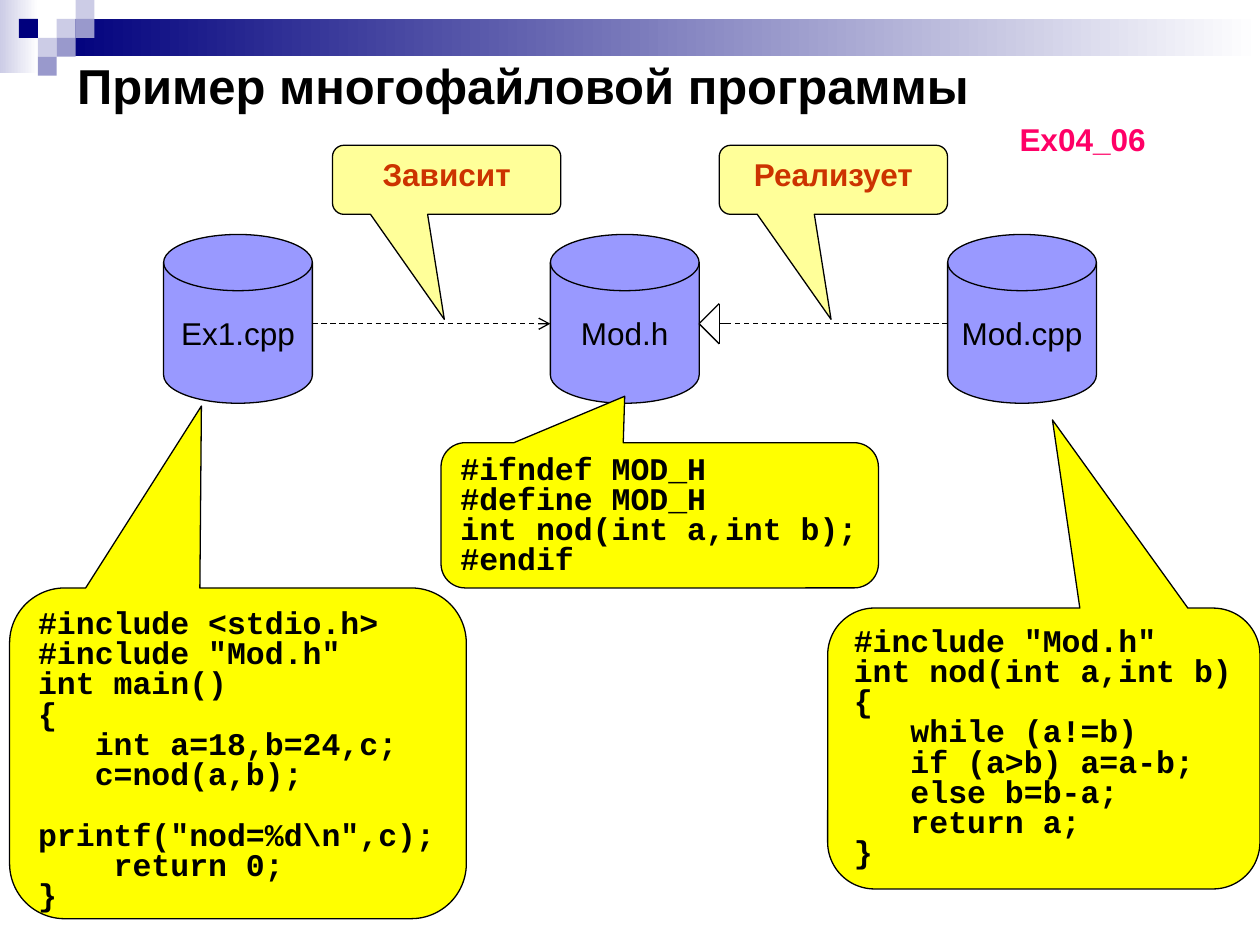
from lxml import etree
from pptx import Presentation
from pptx.dml.color import RGBColor
from pptx.enum import dml, shapes, text
from pptx.oxml import ns
from pptx.util import Pt

HUES = {"navy": "00007D", "mid": "9999CC", "pale": "CCCCE6", "white": "FFFFFF",
        "black": "000000", "disk": "9999FF", "cream": "FFFF99", "yellow": "FFFF00",
        "rust": "CC3300", "pink": "FF0066"}
KIND = shapes.MSO_SHAPE

MAIN = """#include <stdio.h>
#include "Mod.h"
int main()
{
   int a=18,b=24,c;
   c=nod(a,b);
   printf("nod=%d\\n",c);
    return 0;
}"""
HEAD = """#ifndef MOD_H
#define MOD_H
int nod(int a,int b);
#endif"""
BODY = """#include "Mod.h"
int nod(int a,int b)
{
   while (a!=b)
   if (a>b) a=a-b;
   else b=b-a;
   return a;
}"""


def hue(name):
    return RGBColor.from_string(HUES[name])


class Pen:
    """Draws styled elements on the current slide."""

    def __init__(self, slide):
        self.slide = slide
        self.font = "Arial"
        self.code = "Courier New"
        self.size = 18
        self.width = 0.75

    def letter(self, shape, words, color="black", size=None, font=None, bold=True,
               align=text.PP_ALIGN.LEFT, anchor=text.MSO_ANCHOR.TOP, wrap=True, lead=None):
        frame = shape.text_frame
        frame.text = words
        frame.word_wrap = wrap
        frame.vertical_anchor = anchor
        for para in frame.paragraphs:
            para.alignment = align
            para.line_spacing = lead
            for run in para.runs:
                run.font.name = font or self.font
                run.font.size = Pt(size or self.size)
                run.font.bold = bold
                run.font.color.rgb = hue(color)

    def shape(self, kind, box, fill, line=True):
        item = self.slide.shapes.add_shape(kind, *map(Pt, box))
        item.shadow.inherit = False
        item.fill.solid()
        item.fill.fore_color.rgb = hue(fill)
        if line:
            item.line.color.rgb = hue("black")
            item.line.width = Pt(self.width)
        else:
            item.line.fill.background()
        return item

    def fade(self, box, start):
        item = self.shape(KIND.RECTANGLE, box, start, line=False)
        item.fill.gradient()
        item.fill.gradient_angle = 0
        for stop, name in zip(item.fill.gradient_stops, (start, "white")):
            stop.color.rgb = hue(name)

    def label(self, box, words, **style):
        self.letter(self.slide.shapes.add_textbox(*map(Pt, box)), words, **style)

    def disk(self, box, words):
        item = self.shape(KIND.FLOWCHART_MAGNETIC_DISK, box, "disk")
        self.letter(item, words, bold=False, wrap=False,
                    align=text.PP_ALIGN.CENTER, anchor=text.MSO_ANCHOR.MIDDLE)

    def call(self, box, tip, words, fill, **style):
        item = self.shape(KIND.ROUNDED_RECTANGULAR_CALLOUT, box, fill)
        item.adjustments[0], item.adjustments[1] = tip
        self.letter(item, words, **style)

    def line(self, start, end, dash=False, arrow=False):
        item = self.slide.shapes.add_connector(
            shapes.MSO_CONNECTOR.STRAIGHT, *map(Pt, start + end))
        item.line.color.rgb = hue("black")
        item.line.width = Pt(self.width)
        if dash:
            item.line.dash_style = dml.MSO_LINE.DASH
        props = item._element.spPr
        if arrow:
            etree.SubElement(props.find(ns.qn("a:ln")), ns.qn("a:tailEnd"), type="arrow")
        etree.SubElement(props, ns.qn("a:effectLst"))


def main():
    deck = Presentation()
    deck.slide_width, deck.slide_height = Pt(720), Pt(540)
    pen = Pen(deck.slides.add_slide(deck.slide_layouts[6]))

    pen.fade((0, 0, 22, 41.6), "pale")
    pen.fade((32.4, 10.8, 687.6, 21.4), "navy")
    side = 10.8
    for col, row, fill in ((3, 1, "pale"), (4, 0, "pale"), (4, 1, "mid"), (2, 2, "pale"),
                           (1, 1, "navy"), (3, 2, "mid"), (2, 3, "mid")):
        pen.shape(KIND.RECTANGLE, (col * side, row * side, side, side), fill, line=False)

    pen.label((37, 26, 683, 45.5), "Пример многофайловой программы", size=28,
              anchor=text.MSO_ANCHOR.MIDDLE)

    for left, name in ((93.5, "Ex1.cpp"), (314.5, "Mod.h"), (541.5, "Mod.cpp")):
        pen.disk((left, 134, 85, 96.5), name)

    mid = 185
    tip, top, low = (399.5, mid), (411, mid - 11.5), (411, mid + 11.5)
    pen.line((178.5, mid), (314.5, mid), dash=True, arrow=True)
    pen.line((541.5, mid), (417, mid), dash=True)
    pen.line((411, mid), (417, mid))
    for start, end in ((low, top), (top, tip), (tip, low)):
        pen.line(start, end)

    for left, words in ((190, "Зависит"), (411, "Реализует")):
        pen.call((left, 83, 130.5, 39.5), (-0.01, 2.02), words, "cream", color="rust",
                 align=text.PP_ALIGN.CENTER)
    for box, point, words in (((252, 253, 250, 83), (-0.08, -0.82), HEAD),
                              ((5.5, 336, 261, 189), (-0.08, -1.05), MAIN),
                              ((473, 347.5, 247, 160.5), (0.02, -1.17), BODY)):
        pen.call(box, point, words, "yellow", font=pen.code, lead=0.8)

    pen.label((575.5, 65, 87, 29), "Ex04_06", color="pink", wrap=False)
    deck.save("out.pptx")


if __name__ == "__main__":
    main()
